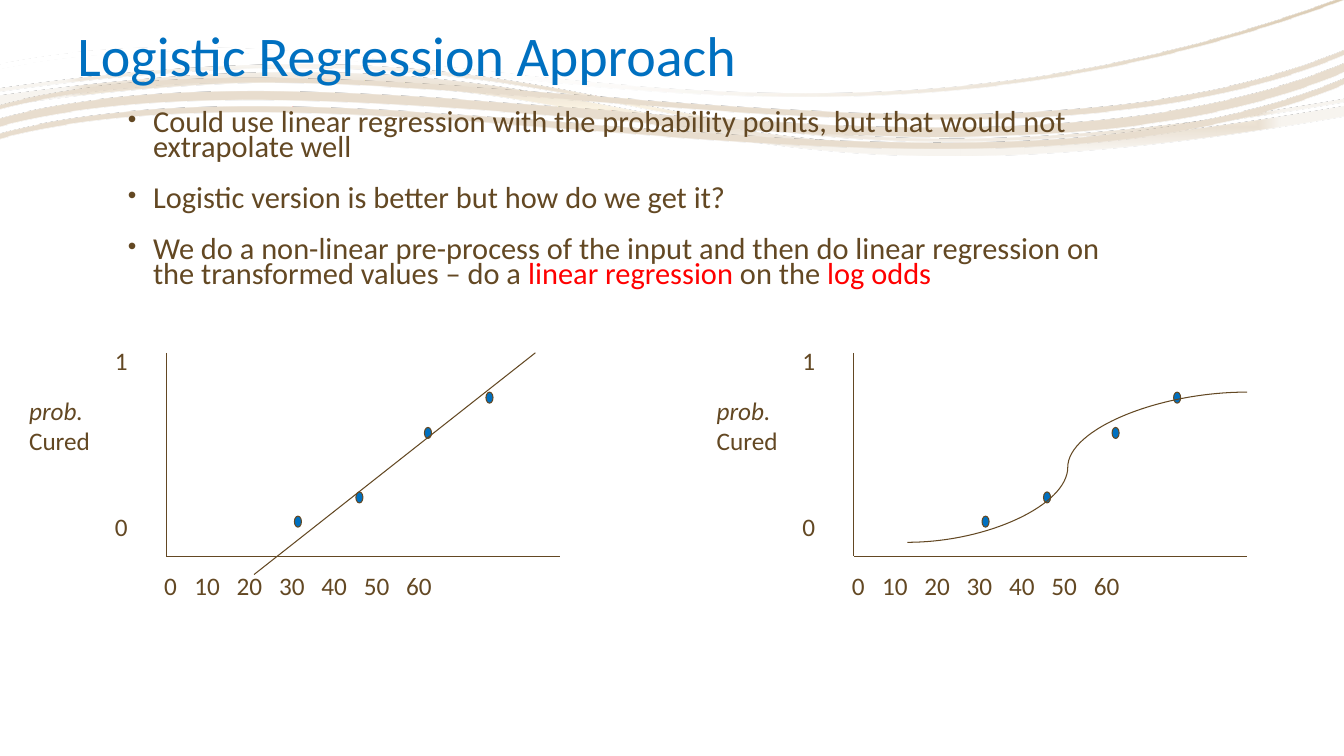
import math

from lxml import etree
from pptx import Presentation
from pptx import util as u
from pptx.dml.color import RGBColor
from pptx.enum import shapes, text
from pptx.oxml import ns

WIDTH, HEIGHT = 13.33, 7.5
FONT = "Calibri"
BROWN, BLUE, RED = "634823", "0070C0", "FF0000"
WAVE_TILT = -3.5
UNITS = 1000  # outline units to the inch

# Each wave is a list of bands; a band is an upper and a lower edge, and each
# edge is a chain of cubic curves running from right to left on the slide.
RIBBON = [
    ([(13.33, 1.05), (7.38, 2.09), (6.7, 0.74), (3.06, 0.72), (2.22, 0.71), (1.24, 0.78), (0, 0.95)],
     [(13.33, 1.15), (6.02, 2.43), (6.67, 0.1), (0, 1.05)]),
    ([(13.33, 0.98), (7.38, 2.02), (6.7, 0.67), (3.06, 0.64), (2.22, 0.64), (1.24, 0.7), (0, 0.88)],
     [(13.33, 1.01), (6.02, 2.29), (6.67, -0.04), (0, 0.91)]),
]
THREAD = [
    ([(13.33, -0.03), (7.54, 2.11), (3.73, -0.14), (0, 0.64)],
     [(13.33, 0), (7.54, 2.15), (3.73, -0.1), (0, 0.68)]),
]
STRANDS = [
    ([(13.33, top), (9.55, top + 1.58), (3.49, top - 0.4), (0, top + 0.55)],
     [(13.33, low), (9.55, low + 1.59), (3.49, low - 0.4), (0, low + 0.54)])
    for top, low in [(0.77, 0.83), (0.62, 0.71), (0.49, 0.54)]
]


def colour(value):
    return RGBColor.from_string(value)


def add_xml(parent, tag, **attributes):
    child = etree.SubElement(parent, ns.qn(tag))
    for name, value in attributes.items():
        child.set(name, str(value))
    return child


def set_gradient(shape, stops, angle=None, path=None, focus=None):
    """Fill with (position, colour, opacity) stops, linear or around a focus."""
    gradient = etree.Element(ns.qn("a:gradFill"), rotWithShape="1")
    stop_list = add_xml(gradient, "a:gsLst")
    for position, value, opacity in stops:
        stop = add_xml(stop_list, "a:gs", pos=position * 1000)
        add_xml(add_xml(stop, "a:srgbClr", val=value), "a:alpha", val=opacity * 1000)
    if path:
        radial = add_xml(gradient, "a:path", path=path)
        sides = {side: share * 1000 for side, share in zip("ltrb", focus)}
        add_xml(radial, "a:fillToRect", **sides)
    else:
        add_xml(gradient, "a:lin", ang=angle * 60000, scaled=0)
    shape._element.spPr.find(ns.qn("a:custGeom")).addnext(gradient)


def add_wave(slide, box, bands, **gradient):
    """Draw curved bands in a box that is tilted about its centre."""
    left, top, width, height = box
    cosine, sine = (turn(math.radians(-WAVE_TILT)) for turn in (math.cos, math.sin))

    def add_step(outline, tag, points):
        step = add_xml(outline, tag)
        for x, y in points:
            across, down = x - left - width / 2, y - top - height / 2
            add_xml(step, "a:pt",
                    x=round((across * cosine - down * sine + width / 2) * UNITS),
                    y=round((across * sine + down * cosine + height / 2) * UNITS))

    builder = slide.shapes.build_freeform(0, 0, scale=u.Inches(1) / UNITS)
    right, bottom = width * UNITS, height * UNITS
    builder.add_line_segments([(right, 0), (right, bottom), (0, bottom)])
    shape = builder.convert_to_shape(u.Inches(left), u.Inches(top))
    outline = next(shape._element.iter(ns.qn("a:path")))
    for step in list(outline):
        outline.remove(step)
    for upper, lower in bands:
        back = lower[::-1]
        add_step(outline, "a:moveTo", upper[:1])
        for edge in (upper, back):
            if edge is back:
                add_step(outline, "a:lnTo", back[:1])
            for first in range(1, len(edge), 3):
                add_step(outline, "a:cubicBezTo", edge[first:first + 3])
        add_xml(outline, "a:close")
    shape.rotation = WAVE_TILT
    shape.shadow.inherit = False
    shape.line.fill.background()
    set_gradient(shape, **gradient)


def add_background(slide):
    add_wave(slide, (0.01, 0.39, 13.31, 1.35), RIBBON, path="shape", focus=(50, 50, 50, 50),
             stops=[(0, "FAF1DF", 90), (18, "EAE0D2", 100), (37, "F7F4EF", 100), (100, "F7F4EF", 100)])
    add_wave(slide, (0.03, 0.15, 13.35, 1.71), THREAD, angle=45,
             stops=[(36, "FFFFFF", 30), (100, "CBB491", 100)])
    add_wave(slide, (-0.01, 0.51, 13.36, 1.15), STRANDS, path="rect", focus=(100, 100, 0, 0),
             stops=[(36, "FFFFFF", 47), (100, "E8DDCE", 100)])


def add_text_box(slide, left, top, width, height, anchor=text.MSO_ANCHOR.TOP):
    frame = slide.shapes.add_textbox(*map(u.Inches, (left, top, width, height))).text_frame
    frame.word_wrap = True
    frame.vertical_anchor = anchor
    return frame


def add_run(paragraph, words, size=18, value=BROWN, italic=False):
    run = paragraph.add_run()
    run.text = words
    run.font.name = FONT
    run.font.size = u.Pt(size)
    run.font.color.rgb = colour(value)
    run.font.italic = italic


def add_title(slide, box, words):
    paragraph = add_text_box(slide, *box, anchor=text.MSO_ANCHOR.BOTTOM).paragraphs[0]
    paragraph.line_spacing = 0.9
    add_run(paragraph, words, 40, BLUE)


def add_bullets(slide, box, items):
    frame = add_text_box(slide, *box)
    for index, runs in enumerate(items):
        paragraph = frame.add_paragraph() if index else frame.paragraphs[0]
        paragraph.line_spacing = 0.7
        if index:
            paragraph.space_before = u.Pt(18)
        properties = paragraph._p.get_or_add_pPr()
        properties.set("marL", str(u.Inches(0.3)))
        properties.set("indent", str(u.Inches(-0.25)))
        add_xml(properties, "a:buSzPct", val=80000)
        add_xml(properties, "a:buFont", typeface="Arial")
        add_xml(properties, "a:buChar", char="•")
        for words, value in runs:
            add_run(paragraph, words, 21.7, value)


def add_line(slide, start, end, kind=shapes.MSO_CONNECTOR.STRAIGHT):
    line = slide.shapes.add_connector(kind, *map(u.Inches, (*start, *end)))
    line.line.color.rgb = colour(BROWN)
    line.line.width = u.Pt(0.75)
    add_xml(line._element.spPr, "a:effectLst")
    return line


def add_scale(slide, left, top, labels, first_gap=0.3, gap=0.42):
    """Write the axis numbers on one line with evenly spaced tab stops."""
    paragraph = add_text_box(slide, left, top, 4.76, 0.4).paragraphs[0]
    tabs = add_xml(paragraph._p.get_or_add_pPr(), "a:tabLst")
    for index in range(len(labels) - 1):
        add_xml(tabs, "a:tab", pos=u.Inches(first_gap + gap * index), algn="l")
    add_run(paragraph, "\t".join(labels))


def add_plot(slide, left, top):
    """Draw axes, labels and points; return a function from plot to slide places."""
    def place(x, y):
        return left + x, top + y

    origin = place(1.46, 2.14)
    add_line(slide, place(1.46, 0.12), origin)
    add_line(slide, origin, place(5.36, 2.14))
    add_scale(slide, *place(1.34, 2.23), [str(age) for age in range(0, 70, 10)])
    axis_name = add_text_box(slide, *place(0, 0.49), 1.22, 0.71)
    add_run(axis_name.paragraphs[0], "prob.", italic=True)
    add_run(axis_name.add_paragraph(), "Cured")
    for x, y in [(4.02, 0.86), (2.73, 1.74), (4.63, 0.51), (3.34, 1.5)]:
        point = slide.shapes.add_shape(
            shapes.MSO_SHAPE.OVAL, *map(u.Inches, (*place(x, y), 0.07, 0.11)))
        point.shadow.inherit = False
        point.fill.solid()
        point.fill.fore_color.rgb = colour(BLUE)
        point.line.color.rgb = colour(BROWN)
        point.line.width = u.Pt(0.75)
    for label, y in [("0", 1.64), ("1", 0)]:
        add_run(add_text_box(slide, *place(0.85, y), 0.49, 0.4).paragraphs[0], label)
    return place


def add_linear_plot(slide, left, top):
    place = add_plot(slide, left, top)
    add_line(slide, place(5.12, 0.12), place(2.33, 2.32))


def add_logistic_plot(slide, left, top):
    place = add_plot(slide, left, top)
    curve = add_line(slide, place(1.99, 2), place(5.36, 0.51), shapes.MSO_CONNECTOR.CURVE)
    guides = curve._element.spPr.find(ns.qn("a:prstGeom")).get_or_add_avLst()
    add_xml(guides, "a:gd", name="adj1", fmla="val 47200")


def main():
    presentation = Presentation()
    presentation.slide_width = u.Inches(WIDTH)
    presentation.slide_height = u.Inches(HEIGHT)
    slide = presentation.slides.add_slide(presentation.slide_layouts[6])
    add_background(slide)
    add_title(slide, (0.67, 0.17, 12, 0.76), "Logistic Regression Approach")
    add_bullets(slide, (1.12, 1.06, 10.17, 2.17), [
        [("Could use linear regression with the probability points, but that would not extrapolate well", BROWN)],
        [("Logistic version is better but how do we get it?", BROWN)],
        [("We do a non-linear pre-process of the input and then do linear regression on "
          "the transformed values – do a ", BROWN),
         ("linear regression ", RED), ("on the ", BROWN), ("log odds", RED)],
    ])
    add_linear_plot(slide, 0.19, 3.38)
    add_logistic_plot(slide, 7.01, 3.38)
    presentation.save("out.pptx")


if __name__ == "__main__":
    main()
